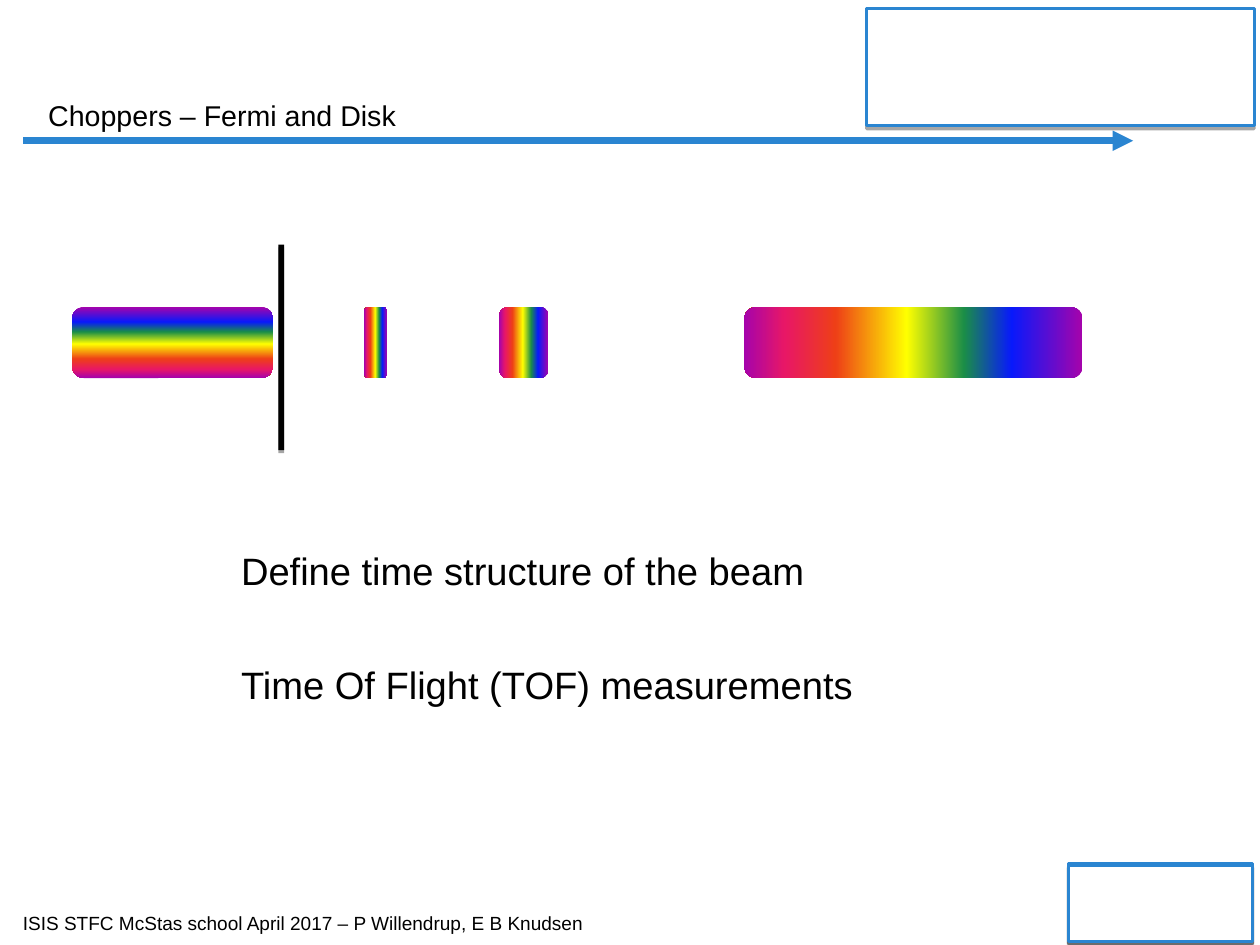
from lxml.etree import SubElement
from pptx import Presentation
from pptx.dml.color import RGBColor
from pptx.enum.shapes import MSO_CONNECTOR as Link, MSO_SHAPE as Form
from pptx.enum.text import MSO_ANCHOR as Anchor, MSO_AUTO_SIZE as Fit, PP_ALIGN as Align
from pptx.oxml.ns import qn
from pptx.util import Emu, Inches, Pt

WIDE, HIGH = Emu(10080625), Emu(7559675)
BLUE = RGBColor(0x2A, 0x85, 0xD1)
BLACK = RGBColor(0, 0, 0)
WHITE = RGBColor(0xFF, 0xFF, 0xFF)
RAINBOW = [
    (0, RGBColor(0xA6, 0x03, 0xAB)),
    (21, RGBColor(0x08, 0x19, 0xFB)),
    (35, RGBColor(0x1A, 0x8D, 0x48)),
    (52, RGBColor(0xFF, 0xFF, 0x00)),
    (73, RGBColor(0xEE, 0x3F, 0x17)),
    (88, RGBColor(0xE8, 0x17, 0x66)),
    (100, RGBColor(0xA6, 0x03, 0xAB)),
]


def area(x, y, w, h):
    """Turn percent shares of the slide into lengths."""
    return [int(part * size / 100) for part, size in zip((x, y, w, h), (WIDE, HIGH) * 2)]


def place(shape, box):
    shape.left, shape.top, shape.width, shape.height = area(*box)


def add_tint(parent, color, alpha=None):
    tint = SubElement(parent, qn("a:srgbClr"), val=str(color))
    if alpha:
        SubElement(tint, qn("a:alpha"), val=str(alpha * 1000))


def add_block(slide, box, fill, line=None):
    """Add a filled rectangle with a short shadow below it."""
    block = slide.shapes.add_shape(Form.RECTANGLE, *area(*box))
    block.fill.solid()
    block.fill.fore_color.rgb = fill
    if line is None:
        block.line.fill.background()
    else:
        block.line.color.rgb = line
        block.line.width = Pt(2)
    block.shadow.inherit = False
    effects = block._element.spPr.find(qn("a:effectLst"))
    shadow = SubElement(effects, qn("a:outerShdw"), blurRad="0", dist=str(Pt(1.8)),
                        dir="5400000", rotWithShape="0")
    add_tint(shadow, BLACK, 35)


def add_pulse(slide, left, width, angle):
    """Add a rainbow bar; the angle runs counter-clockwise."""
    pulse = slide.shapes.add_shape(Form.ROUNDED_RECTANGLE, *area(left, 32.5, width, 7.5))
    pulse.adjustments[0] = 0.167
    pulse.shadow.inherit = False
    pulse.line.fill.background()
    pulse.fill.gradient()
    pulse.fill.gradient_angle = angle
    stops = pulse._element.spPr.find(".//" + qn("a:gsLst"))
    for stop in list(stops):
        stops.remove(stop)
    for share, color in RAINBOW:
        add_tint(SubElement(stops, qn("a:gs"), pos=str(share * 1000)), color)


def add_arrow(slide, x, y, end):
    left, top, right, _ = area(x, y, end, 0)
    arrow = slide.shapes.add_connector(Link.STRAIGHT, left, top, right, top)
    arrow.line.color.rgb = BLUE
    arrow.line.width = Pt(4.31)
    SubElement(arrow.line._get_or_add_ln(), qn("a:tailEnd"), type="triangle")
    SubElement(arrow._element.spPr, qn("a:effectLst"))


def write(frame, lines, size, gap=0):
    """Fill a text frame with plain left-aligned paragraphs."""
    frame.word_wrap = True
    frame.auto_size = Fit.NONE
    for i, words in enumerate(lines):
        para = frame.paragraphs[0] if i == 0 else frame.add_paragraph()
        props = para._p.get_or_add_pPr()
        props.set("marL", "0")
        props.set("indent", "0")
        SubElement(props, qn("a:buNone"))
        para.alignment = Align.LEFT
        para.space_before = Pt(gap if i else 0)
        run = para.add_run()
        run.text = words
        run.font.name = "Arial"
        run.font.size = Pt(size)
        run.font.color.rgb = BLACK


def set_inset(frame, inset):
    frame.margin_left = frame.margin_right = inset
    frame.margin_top = frame.margin_bottom = inset


def main():
    deck = Presentation()
    deck.slide_width, deck.slide_height = WIDE, HIGH
    slide = deck.slides.add_slide(deck.slide_layouts[1])

    title, body = slide.placeholders
    place(title, (3.83, 6.95, 90.11, 10.52))
    set_inset(title.text_frame, 0)
    title.text_frame.vertical_anchor = Anchor.MIDDLE
    write(title.text_frame, ["Choppers – Fermi and Disk"], 18)

    place(body, (18.22, 57.28, 54, 20.56))
    write(body.text_frame, ["Define time structure of the beam",
                            "Time Of Flight (TOF) measurements"], 24, gap=43.5)

    footer = slide.shapes.add_textbox(*area(1.36, 95.89, 50, 3.63)).text_frame
    set_inset(footer, Inches(0.05))
    write(footer, ["ISIS STFC McStas school April 2017 – P Willendrup, E B Knudsen"], 12)

    for top in (91.41, 91.54):
        add_block(slide, (84.8, top, 14.61, 8.1), WHITE, BLUE)
    add_arrow(slide, 1.83, 14.9, 89.93)
    add_block(slide, (68.78, 0.88, 30.76, 12.45), WHITE, BLUE)

    add_block(slide, (22.1, 25.88, 0.45, 21.77), BLACK)
    add_pulse(slide, 5.72, 15.97, 270)
    for left, width in ((59.07, 26.86), (28.92, 1.81), (39.63, 3.9)):
        add_pulse(slide, left, width, 180)

    deck.save("out.pptx")


if __name__ == "__main__":
    main()
